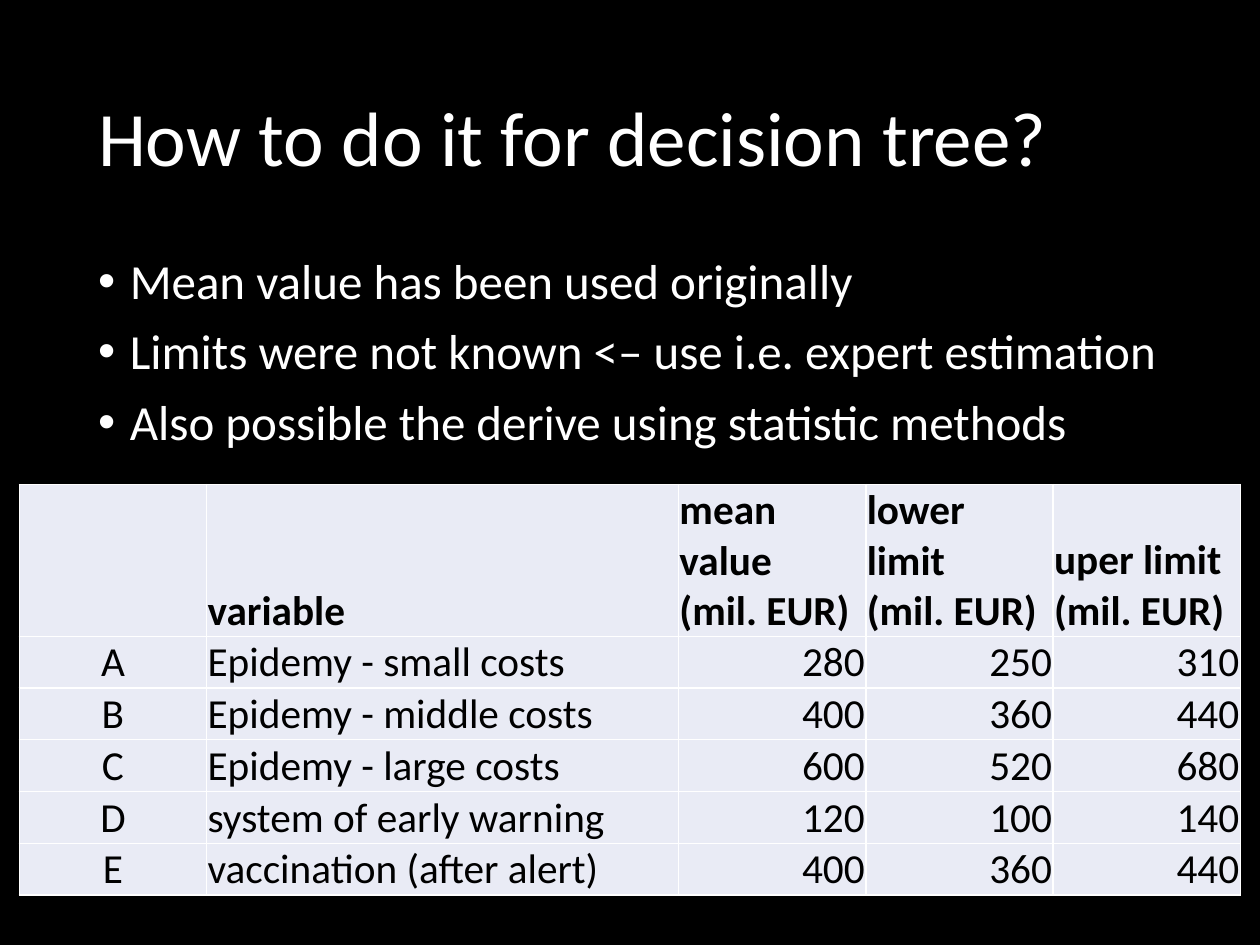
"""Build a slide on decision tree limits with bullets and a table of variables."""
from lxml.etree import SubElement
from pptx import Presentation
from pptx.dml.color import RGBColor
from pptx.enum.text import MSO_ANCHOR as ANCHOR, PP_ALIGN as ALIGN
from pptx.oxml.ns import qn
from pptx.util import Pt

TITLE = "How to do it for decision tree?"
BULLETS = [
    "Mean value has been used originally",
    "Limits were not known <– use i.e. expert estimation",
    "Also possible the derive using statistic methods",
]
ROWS = [
    ("", "variable", "mean value\n(mil. EUR)", "lower limit\n(mil. EUR)", "uper limit (mil. EUR)"),
    ("A", "Epidemy - small costs", 280, 250, 310),
    ("B", "Epidemy - middle costs", 400, 360, 440),
    ("C", "Epidemy - large costs", 600, 520, 680),
    ("D", "system of early warning", 120, 100, 140),
    ("E", "vaccination (after alert)", 400, 360, 440),
]
ALIGNS = [ALIGN.CENTER, ALIGN.LEFT, ALIGN.RIGHT, ALIGN.RIGHT, ALIGN.RIGHT]
COL_WIDTHS = [118, 297.3, 118, 118, 118]
ROW_HEIGHTS = [95.5] + [32.6] * 5
FONT = "Calibri"
BLACK, WHITE, CELL = "000000", "FFFFFF", "E9EBF5"


def paint(fill, color):
    fill.solid()
    fill.fore_color.rgb = RGBColor.from_string(color)


def style(p, size, color, bold=False):
    for r in p.runs:
        r.font.name, r.font.size, r.font.bold = FONT, Pt(size), bold
        paint(r.font.fill, color)


def add_text(slide, box, lines, size, anchor):
    tf = slide.shapes.add_textbox(*map(Pt, box)).text_frame
    tf.word_wrap = True
    tf.vertical_anchor = anchor
    tf.text = "\n".join(lines)
    for p in tf.paragraphs:
        p.line_spacing = 0.9
        style(p, size, WHITE)
    return tf


def add_bullet(p):
    p.space_before = Pt(11)
    pPr = p._p.get_or_add_pPr()
    pPr.set("marL", str(Pt(20)))
    pPr.set("indent", str(-Pt(20)))
    SubElement(pPr, qn("a:buFont"), typeface="Arial")
    SubElement(pPr, qn("a:buChar"), char="•")


def add_borders(cell):
    tcPr = cell._tc.get_or_add_tcPr()
    for side in ("lnL", "lnR", "lnT", "lnB"):
        ln = SubElement(tcPr, qn("a:" + side), w=str(Pt(1)))
        SubElement(SubElement(ln, qn("a:solidFill")), qn("a:srgbClr"), val=WHITE)


def fill_cell(cell, text, align, bold):
    cell.text = str(text)
    cell.vertical_anchor = ANCHOR.BOTTOM
    cell.margin_left = cell.margin_right = cell.margin_top = Pt(0.6)
    cell.margin_bottom = 0
    add_borders(cell)
    paint(cell.fill, CELL)
    for p in cell.text_frame.paragraphs:
        p.alignment = align
        style(p, 26, BLACK, bold)


def add_variables(slide):
    size = map(Pt, (12.2, 305.3, sum(COL_WIDTHS), sum(ROW_HEIGHTS)))
    table = slide.shapes.add_table(len(ROWS), len(COL_WIDTHS), *size).table
    table.first_row = table.horz_banding = False
    for col, width in zip(table.columns, COL_WIDTHS):
        col.width = Pt(width)
    for i, (row, height) in enumerate(zip(ROWS, ROW_HEIGHTS)):
        table.rows[i].height = Pt(height)
        for j, text in enumerate(row):
            fill_cell(table.cell(i, j), text, ALIGNS[j] if i else ALIGN.LEFT, i == 0)


def main():
    prs = Presentation()
    prs.slide_width, prs.slide_height = Pt(793.75), Pt(595.25)
    slide = prs.slides.add_slide(prs.slide_layouts[6])
    paint(slide.background.fill, BLACK)
    add_text(slide, (54.7, 31.7, 684.7, 115.2), [TITLE], 48.5, ANCHOR.MIDDLE)
    body = add_text(slide, (54.7, 158.4, 684.7, 378), BULLETS, 30.9, ANCHOR.TOP)
    for p in body.paragraphs:
        add_bullet(p)
    add_variables(slide)
    prs.save("out.pptx")


if __name__ == "__main__":
    main()
